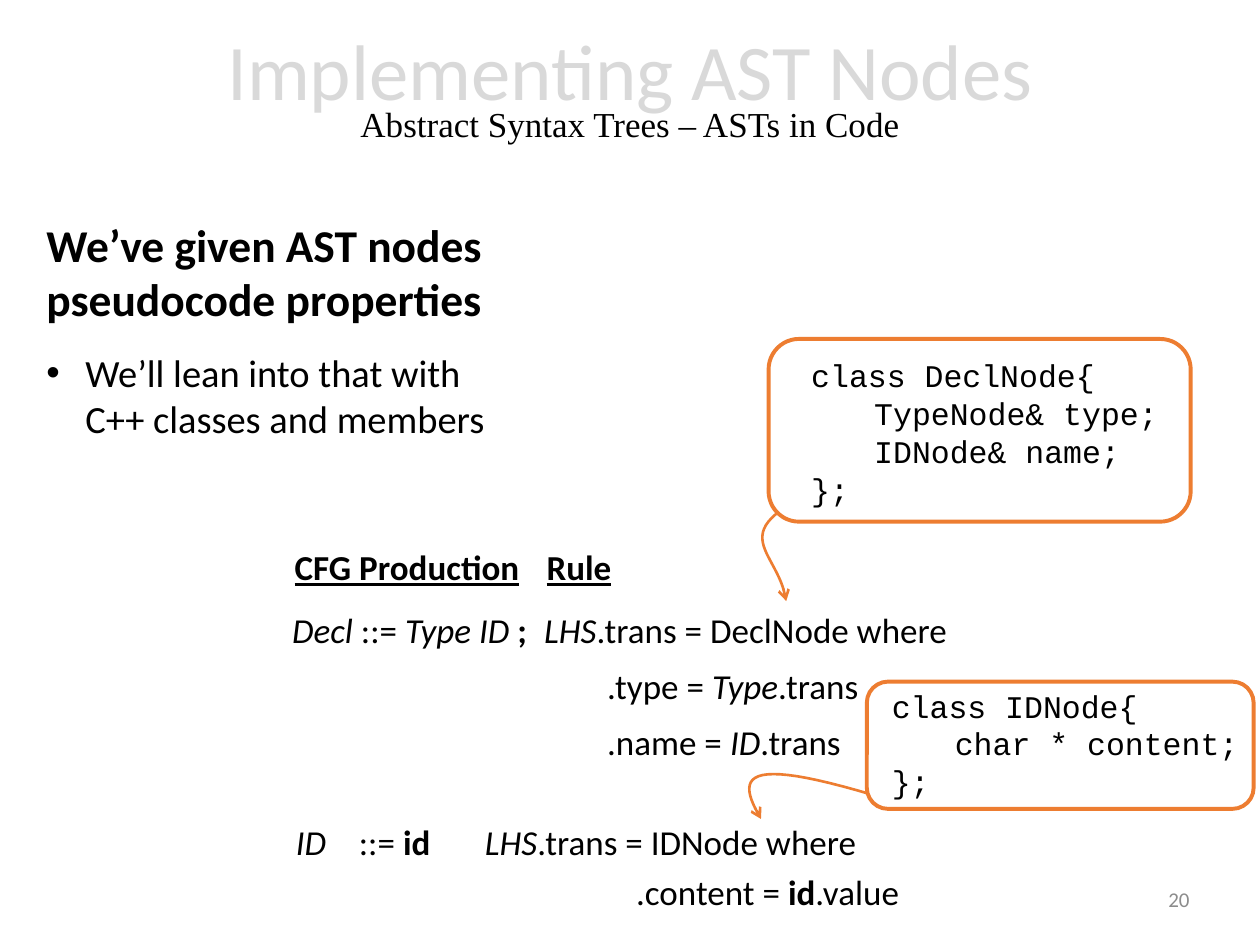
from lxml import etree
from pptx import Presentation
from pptx import util as u
from pptx.dml.color import RGBColor
from pptx.enum import shapes, text
from pptx.oxml.ns import qn

ORANGE, BLACK, WHITE = "ED7D31", "000000", "FFFFFF"
PALE, GREY = "D9D9D9", "8C8C8C"
STYLES = {"b": "bold", "i": "italic", "u": "underline"}
COLUMN = 2.0


def color(value):
    return RGBColor.from_string(value)


def apply(target, values):
    for name, value in values.items():
        setattr(target, name, value)


def add_run(paragraph, words, size, font="Calibri", ink=BLACK, style=""):
    run = paragraph.add_run()
    run.text = words
    apply(run.font, {"size": u.Pt(size), "name": font})
    apply(run.font, {STYLES[letter]: True for letter in style})
    run.font.color.rgb = color(ink)


def set_indent(paragraph, left, hanging=0, bullet=None, tabs=()):
    props = paragraph._p.get_or_add_pPr()
    props.set("marL", str(u.Inches(left)))
    props.set("indent", str(u.Inches(-hanging)))
    if bullet:
        etree.SubElement(props, qn("a:buFont")).set("typeface", "Arial")
        etree.SubElement(props, qn("a:buChar")).set("char", bullet)
    if tabs:
        stops = etree.SubElement(props, qn("a:tabLst"))
        for position in tabs:
            stop = etree.SubElement(stops, qn("a:tab"))
            stop.set("pos", str(u.Inches(position)))
            stop.set("algn", "l")


def add_text(slide, box, lines, size, font="Calibri", ink=BLACK, spacing=None,
             tabs=(), bullet=None, wrap=True, align=text.PP_ALIGN.LEFT,
             anchor=text.MSO_ANCHOR.TOP):
    frame = slide.shapes.add_textbox(*map(u.Inches, box)).text_frame
    apply(frame, {"word_wrap": wrap, "vertical_anchor": anchor})
    for index, (left, runs) in enumerate(lines):
        paragraph = frame.add_paragraph() if index else frame.paragraphs[0]
        apply(paragraph, {"alignment": align, "line_spacing": spacing})
        set_indent(paragraph, left, left if bullet else 0, bullet, tabs)
        for words, style in runs:
            add_run(paragraph, words, size, font, ink, style)
    return frame


def add_title(slide, heading, subtitle):
    frame = add_text(slide, (0.69, 0.03, 8.62, 1.45), [(0, [(heading, "")])], 45,
                     ink=PALE, spacing=0.7, align=text.PP_ALIGN.CENTER,
                     anchor=text.MSO_ANCHOR.MIDDLE)
    paragraph = frame.paragraphs[0]
    paragraph.add_line_break()
    add_run(paragraph, subtitle, 20, "Times New Roman")


def add_curved_arrow(slide, controls, steps=24):
    def point(t):
        weights = ((1 - t) ** 3, 3 * t * (1 - t) ** 2, 3 * t * t * (1 - t), t ** 3)
        return tuple(u.Inches(sum(w * c[axis] for w, c in zip(weights, controls)))
                     for axis in (0, 1))

    builder = slide.shapes.build_freeform(*point(0))
    builder.add_line_segments([point(n / steps) for n in range(1, steps + 1)], close=False)
    arrow = builder.convert_to_shape()
    arrow.shadow.inherit = False
    arrow.fill.background()
    arrow.line.color.rgb = color(ORANGE)
    arrow.line.width = u.Pt(1.5)
    etree.SubElement(arrow.line._get_or_add_ln(), qn("a:tailEnd")).set("type", "arrow")


def add_code_callout(slide, frame_box, code_box, code, arrow):
    add_curved_arrow(slide, arrow)
    frame = slide.shapes.add_shape(shapes.MSO_SHAPE.ROUNDED_RECTANGLE,
                                   *map(u.Inches, frame_box))
    frame.shadow.inherit = False
    frame.fill.solid()
    frame.fill.fore_color.rgb = color(WHITE)
    frame.line.color.rgb = color(ORANGE)
    frame.line.width = u.Pt(2.25)
    lines = [(left, [(words, "")]) for left, words in code]
    add_text(slide, code_box, lines, 18, "Courier New", wrap=False)


def add_grammar(slide):
    header = [(0, [("CFG Production", "bu"), ("\t", "b"), ("Rule", "bu")])]
    declaration = [
        (0, [("Decl", "i"), (" ::= ", ""), ("Type ID", "i"), (" ;\t", "b"),
             ("LHS", "i"), (".trans = DeclNode where", "")]),
        (2.5, [(".type = ", ""), ("Type", "i"), (".trans", "")]),
        (2.5, [(".name = ", ""), ("ID", "i"), (".trans", "")]),
    ]
    identifier = [
        (0, [("ID\t", "i"), ("::= ", ""), ("id\t", "b"), ("LHS", "i"),
             (".trans = IDNode where", "")]),
        (2.7, [(".content = ", ""), ("id", "b"), (".value", "")]),
    ]
    add_text(slide, (2.22, 4.67, 5.61, 1.41), declaration, 20,
             spacing=u.Pt(32), tabs=(COLUMN,))
    add_text(slide, (2.24, 4.17, 2.74, 0.51), header, 20,
             spacing=u.Pt(32), tabs=(COLUMN,))
    add_text(slide, (2.25, 6.39, 5.57, 0.89), identifier, 20,
             spacing=u.Pt(29), tabs=(0.63, COLUMN))


def main():
    deck = Presentation()
    apply(deck, {"slide_width": u.Inches(10), "slide_height": u.Inches(7.5)})
    slide = deck.slides.add_slide(deck.slide_layouts[6])

    add_text(slide, (7.21, 6.94, 2.33, 0.4), [(0, [("20", "")])], 12, ink=GREY,
             align=text.PP_ALIGN.RIGHT, anchor=text.MSO_ANCHOR.MIDDLE)
    add_code_callout(
        slide, (6.1, 2.69, 3.35, 1.45), (6.34, 2.78, 2.97, 1.31),
        [(0, "class DeclNode{"), (0.5, "TypeNode& type;"),
         (0.5, "IDNode& name;"), (0, "};")],
        [(6.24, 4.02), (5.84, 4.28), (6.19, 4.42), (6.24, 4.77)])
    add_title(slide, "Implementing AST Nodes", "Abstract Syntax Trees – ASTs in Code")
    add_grammar(slide)
    add_code_callout(
        slide, (6.88, 5.41, 3.07, 1.01), (6.98, 5.4, 2.97, 1.01),
        [(0, "class IDNode{"), (0.5, "char * content;"), (0, "};")],
        [(6.93, 6.31), (5.89, 6), (5.84, 6.16), (6.04, 6.5)])
    add_text(slide, (0.27, 1.67, 4.4, 0.98),
             [(0, [("We’ve given AST nodes pseudocode properties", "b")])], 26)
    add_text(slide, (0.27, 2.72, 3.79, 0.84),
             [(0.31, [("We’ll lean into that with C++ classes and members", "")])],
             22, bullet="•")
    deck.save("out.pptx")


if __name__ == "__main__":
    main()
